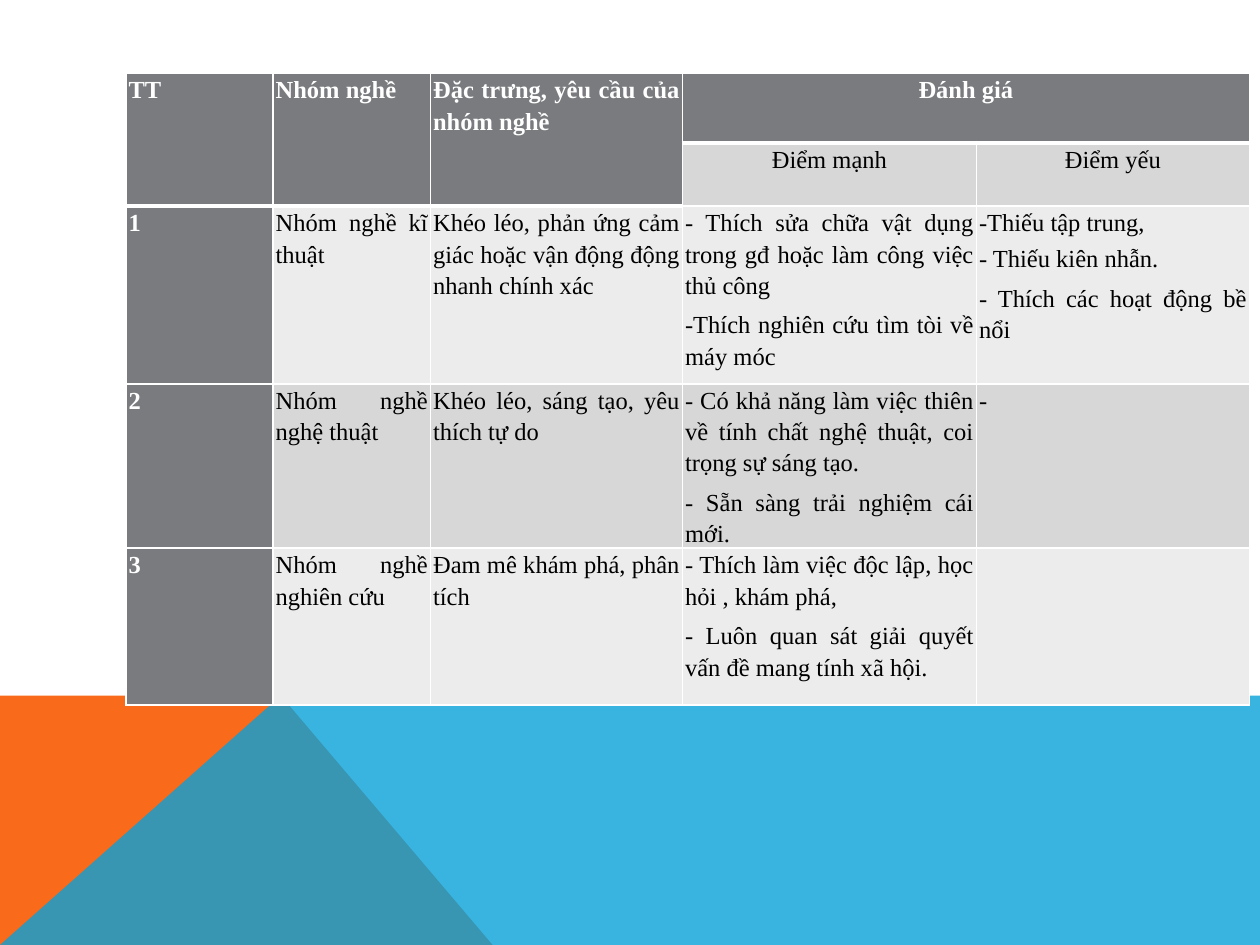
from dataclasses import dataclass

from lxml.etree import SubElement
from pptx import Presentation
from pptx.dml.color import RGBColor as RGB
from pptx.enum.text import PP_ALIGN as Align
from pptx.oxml.ns import qn
from pptx.util import Pt


@dataclass
class Theme:
    orange: str = "F96A1B"
    blue: str = "08A1D9"
    gray: str = "797B7E"
    mid: str = "D7D7D8"
    pale: str = "ECECEC"
    white: str = "FFFFFF"
    black: str = "000000"
    font: str = "Times New Roman"
    size: int = 14


theme = Theme()


def add_band(points, color, alpha=100):
    """Draw one filled outline with no line."""
    spots = [(Pt(x), Pt(y)) for x, y in points]
    pen = slide.shapes.build_freeform(*spots[0], scale=1.0)
    pen.add_line_segments(spots[1:], close=True)
    band = pen.convert_to_shape()
    band.shadow.inherit = False
    band.line.fill.background()
    band.fill.solid()
    band.fill.fore_color.rgb = RGB.from_string(color)
    if alpha < 100:
        tint = band.fill._xPr.find(qn("a:solidFill"))[0]
        SubElement(tint, qn("a:alpha"), val=str(alpha * 1000))


def fill_cell(cell, lines, fill, color, bold, align, base):
    """Set the text, fill and white borders of one cell."""
    cell.margin_left = cell.margin_right = Pt(1.5)
    cell.margin_top = cell.margin_bottom = 0
    for i, line in enumerate(lines):
        frame = cell.text_frame
        para = frame.paragraphs[0] if i == 0 else frame.add_paragraph()
        para.space_before = Pt(5)
        # One short remark is set left with single spacing
        if line == "- Thiếu kiên nhẫn.":
            para.alignment = Align.LEFT
        else:
            para.alignment = align
            para.line_spacing = 1.15
        run = para.add_run()
        run.text = line
        font = run.font
        font.name, font.size, font.bold = theme.font, Pt(theme.size), bold
        font.color.rgb = RGB.from_string(color)
    props = cell._tc.get_or_add_tcPr()
    for side, width in (("L", 1), ("R", 1), ("T", 1), ("B", base)):
        edge = SubElement(props, qn(f"a:ln{side}"), w=str(Pt(width)))
        paint = SubElement(edge, qn("a:solidFill"))
        SubElement(paint, qn("a:srgbClr"), val=theme.white)
    cell.fill.solid()
    cell.fill.fore_color.rgb = RGB.from_string(fill)


deck = Presentation()
deck.slide_width, deck.slide_height = Pt(720), Pt(540)
slide = deck.slides.add_slide(deck.slide_layouts[6])

# Bands at the foot of the slide
top, peak = 397.5, 160.5
add_band([(0, 540), (0, top), (peak, top), (281.5, 540)], theme.orange)
add_band([(0, 540), (peak, top), (720, top), (720, 540)], theme.blue, 80)

# Table grid
widths = [84, 90, 144, 168, 156]
heights = [40, 36, 101.6, 93.8, 89.6]
grid = slide.shapes.add_table(
    len(heights), len(widths), Pt(72), Pt(41.76),
    Pt(sum(widths)), Pt(sum(heights))).table
for col, width in zip(grid.columns, widths):
    col.width = Pt(width)
for row, height in zip(grid.rows, heights):
    row.height = Pt(height)

# Wording: each cell is a list of paragraphs
rows = [
    [["TT"], ["Nhóm nghề"], ["Đặc trưng, yêu cầu của nhóm nghề"],
     ["Đánh giá"], []],
    [[], [], [], ["Điểm mạnh"], ["Điểm yếu"]],
    [["1"], ["Nhóm nghề kĩ thuật"],
     ["Khéo léo, phản ứng cảm giác hoặc vận động động nhanh chính xác"],
     ["- Thích sửa chữa vật dụng trong gđ hoặc làm công việc thủ công",
      "-Thích nghiên cứu tìm tòi về máy móc"],
     ["-Thiếu tập trung,", "- Thiếu kiên nhẫn.",
      "- Thích các hoạt động bề nổi"]],
    [["2"], ["Nhóm nghề nghệ thuật"],
     ["Khéo léo, sáng tạo, yêu thích tự do"],
     ["- Có khả năng làm việc thiên về tính chất nghệ thuật, "
      "coi trọng sự sáng tạo.",
      "- Sẵn sàng trải nghiệm cái mới."],
     ["-"]],
    [["3"], ["Nhóm nghề nghiên cứu"], ["Đam mê khám phá, phân tích"],
     ["- Thích làm việc độc lập, học hỏi , khám phá,",
      "- Luôn quan sát giải quyết vấn đề mang tính xã hội."],
     []],
]

# Cells: dark heads, then rows in two light grays
for r, row in enumerate(rows):
    for c, lines in enumerate(row):
        head = r == 0 or c == 0 or (r == 1 and c < 3)
        light = theme.mid if r % 2 else theme.pale
        fill_cell(
            grid.cell(r, c), lines,
            fill=theme.gray if head else light,
            color=theme.white if head else theme.black,
            bold=head,
            align=Align.CENTER if r < 2 and c > 2 else Align.JUSTIFY,
            base=3 if r == 0 or (r == 1 and c < 3) else 1)

# Merged heads
for c in range(3):
    grid.cell(0, c).merge(grid.cell(1, c))
grid.cell(0, 3).merge(grid.cell(0, 4))

deck.save("out.pptx")
